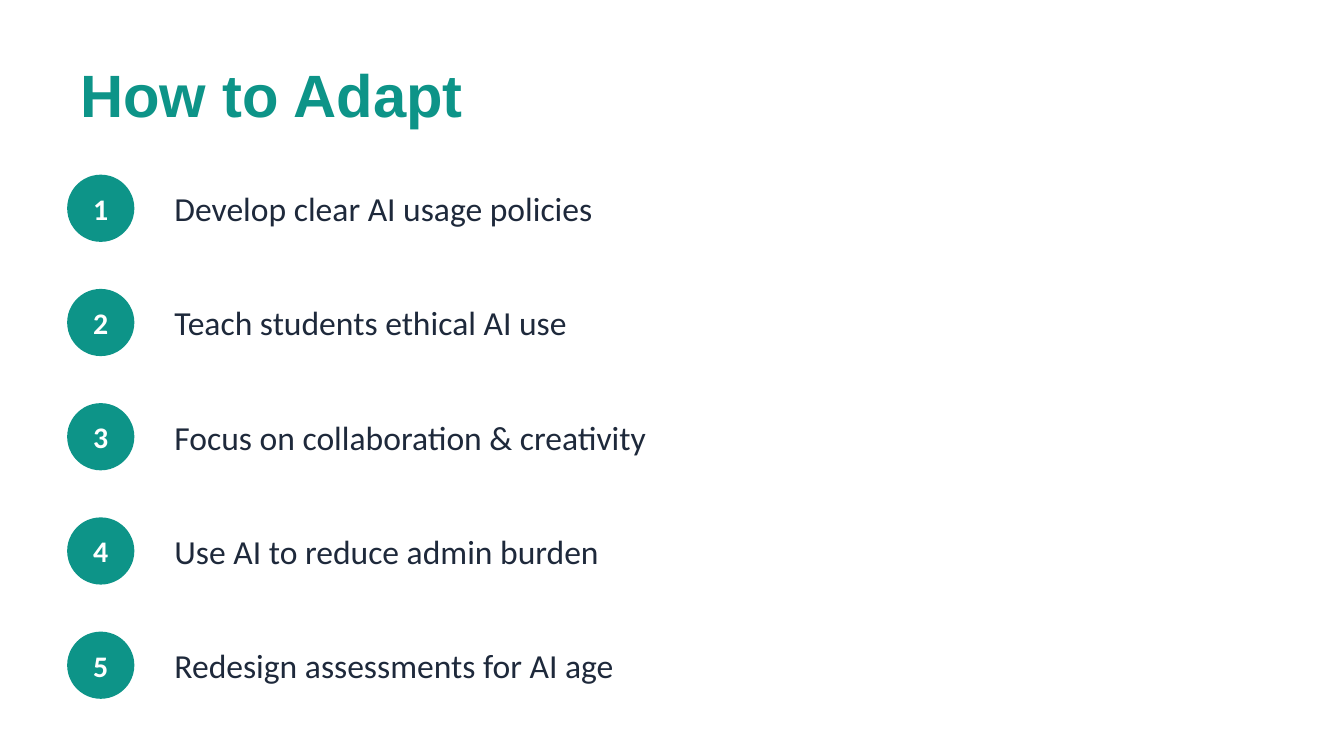
from dataclasses import dataclass

from pptx import Presentation
from pptx.dml.color import RGBColor
from pptx.enum.shapes import MSO_SHAPE
from pptx.enum.text import MSO_ANCHOR, PP_ALIGN
from pptx.util import Pt


@dataclass(frozen=True)
class Theme:
    """Colours, fonts and type sizes of the slide."""
    teal: RGBColor = RGBColor(0x0D, 0x94, 0x88)
    ink: RGBColor = RGBColor(0x1E, 0x29, 0x3B)
    white: RGBColor = RGBColor(0xFF, 0xFF, 0xFF)
    head: str = "Arial"
    body: str = "Calibri"
    title: int = 32
    step: int = 18
    number: int = 16


THEME = Theme()
LEFT, TOP, PITCH, DISC = 36, 93.6, 61.2, 36
STEPS = [
    "Develop clear AI usage policies",
    "Teach students ethical AI use",
    "Focus on collaboration & creativity",
    "Use AI to reduce admin burden",
    "Redesign assessments for AI age",
]


def add_text(slide, text, box, *, size, color, font=THEME.body,
             bold=False, align=PP_ALIGN.LEFT):
    """Add a vertically centred, wrapping line of text."""
    frame = slide.shapes.add_textbox(*map(Pt, box)).text_frame
    frame.word_wrap = True
    frame.vertical_anchor = MSO_ANCHOR.MIDDLE
    line = frame.paragraphs[0]
    line.alignment = align
    run = line.add_run()
    run.text = text
    run.font.name = font
    run.font.size = Pt(size)
    run.font.bold = bold
    run.font.color.rgb = color


def add_disc(slide, box):
    """Add a plain teal circle."""
    disc = slide.shapes.add_shape(MSO_SHAPE.OVAL, *map(Pt, box))
    disc.shadow.inherit = False
    disc.fill.solid()
    disc.fill.fore_color.rgb = THEME.teal
    disc.line.fill.background()


def add_step(slide, number, text, top):
    """Add a numbered circle with its advice beside it."""
    box = (LEFT, top, DISC, DISC)
    add_disc(slide, box)
    add_text(slide, str(number), box, size=THEME.number, color=THEME.white,
             bold=True, align=PP_ALIGN.CENTER)
    add_text(slide, text, (86.4, top, 597.6, DISC), size=THEME.step,
             color=THEME.ink)


def main():
    """Build the slide and save it."""
    deck = Presentation()
    deck.slide_width, deck.slide_height = Pt(720), Pt(405)
    slide = deck.slides.add_slide(deck.slide_layouts[6])
    slide.background.fill.solid()
    slide.background.fill.fore_color.rgb = THEME.white
    add_text(slide, "How to Adapt", (LEFT, 28.8, 648, 43.2), size=THEME.title,
             color=THEME.teal, font=THEME.head, bold=True)
    for index, text in enumerate(STEPS):
        add_step(slide, index + 1, text, TOP + index * PITCH)
    deck.save("out.pptx")


if __name__ == "__main__":
    main()
